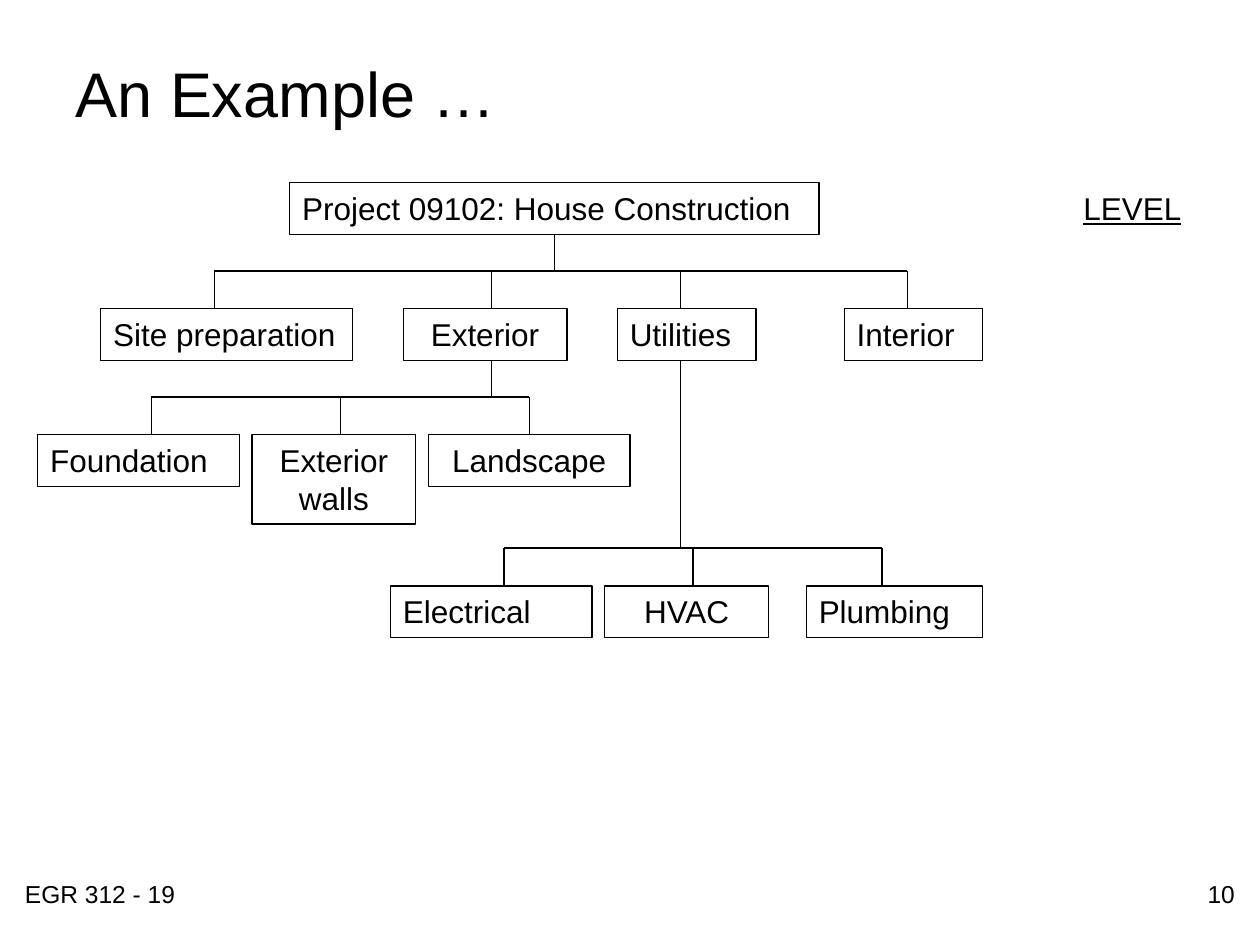
from pptx import Presentation
from pptx.dml.color import RGBColor
from pptx.enum.shapes import MSO_CONNECTOR as Conn, MSO_SHAPE as Shape
from pptx.enum.text import MSO_ANCHOR as Anchor, MSO_AUTO_SIZE as Auto, PP_ALIGN as Align
from pptx.oxml.ns import qn
from pptx.util import Inches, Pt

BLACK = RGBColor(0, 0, 0)
FONT = "Arial"
L, C, R = Align.LEFT, Align.CENTER, Align.RIGHT
HIGH, GAP = 0.41, 0.3  # box height; space between a box and its bus line

# Boxes by row: label, left, width, alignment, x of the line down to it
ROOT = ("Project 09102: House Construction", 2.3, 4.2, L)
PHASES = [
    ("Site preparation", 0.8, 2, L, 1.7),
    ("Exterior", 3.2, 1.3, C, 3.9),
    ("Utilities", 4.9, 1.1, L, 5.4),
    ("Interior", 6.7, 1.1, L, 7.2),
]
OUTSIDE = [
    ("Foundation", 0.3, 1.6, L, 1.2),
    ("Exterior walls", 2, 1.3, C, 2.7),
    ("Landscape", 3.4, 1.6, C, 4.2),
]
SERVICES = [
    ("Electrical", 3.1, 1.6, L, 4),
    ("HVAC", 4.8, 1.3, C, 5.5),
    ("Plumbing", 6.4, 1.4, L, 7),
]
TALL = {"Exterior walls": 0.71}

# Branches: parent label, x of its stem, top of the child row, children
TREE = [
    (ROOT[0], 4.4, 2.45, PHASES),
    ("Exterior", 3.9, 3.45, OUTSIDE),
    ("Utilities", 5.4, 4.65, SERVICES),
]

# Loose text: label, place, format
NOTES = [
    ("EGR 312 - 19", (0.1, 6.93, 2.33, 0.52), dict(size=14)),
    ("10", (7.57, 6.93, 2.33, 0.52), dict(size=14, align=R)),
    ("LEVEL", (8.5, 1.45, 1.1, 0.4), dict(under=True)),
]

deck = Presentation()
deck.slide_width, deck.slide_height = Inches(10), Inches(7.5)
slide = deck.slides.add_slide(deck.slide_layouts[5])
shapes = slide.shapes
boxes = {}


def write(shape, text, size=18, align=L, under=None, anchor=Anchor.TOP, fit=Auto.NONE):
    frame = shape.text_frame
    frame.word_wrap, frame.auto_size = True, fit
    frame.vertical_anchor = anchor
    para = frame.paragraphs[0]
    para.alignment = align
    run = para.add_run()
    run.text = text
    font = run.font
    font.name, font.size, font.underline = FONT, Pt(size), under
    font.color.rgb = BLACK


def add_box(text, left, top, width, align):
    size = (left, top, width, TALL.get(text, HIGH))
    box = shapes.add_shape(Shape.RECTANGLE, *map(Inches, size))
    box.shadow.inherit = False
    box.fill.background()
    box.line.color.rgb, box.line.width = BLACK, Pt(0.75)
    write(box, text, align=align, fit=Auto.SHAPE_TO_FIT_TEXT)
    boxes[text] = box


def add_line(x1, y1, x2, y2, box=None, side=0):
    line = shapes.add_connector(Conn.STRAIGHT, *map(Inches, (x1, y1, x2, y2)))
    line.line.color.rgb, line.line.width = BLACK, Pt(0.75)
    props = line._element.spPr
    props.append(props.makeelement(qn("a:effectLst"), {}))
    # Join only where the line meets the middle of the box side
    if box and abs(box.left + box.width / 2 - Inches(x1)) < Inches(0.01):
        line.begin_connect(box, side)


# Title
title = shapes.title
title.left, title.top, title.width, title.height = map(Inches, (0.5, 0.31, 9, 0.84))
write(title, "An Example …", size=36, anchor=Anchor.MIDDLE)

# Footer and level heading
for text, place, look in NOTES:
    write(shapes.add_textbox(*map(Inches, place)), text, **look)

# Work breakdown tree
name, left, width, align = ROOT
add_box(name, left, 1.45, width, align)
for name, stem, top, kids in TREE:
    bus = top - GAP
    for text, left, width, align, x in kids:
        add_box(text, left, top, width, align)
        add_line(x, top, x, bus, boxes[text], 0)
    add_line(kids[0][-1], bus, kids[-1][-1], bus)
    parent = boxes[name]
    add_line(stem, (parent.top + parent.height) / Inches(1), stem, bus, parent, 2)

deck.save("out.pptx")
